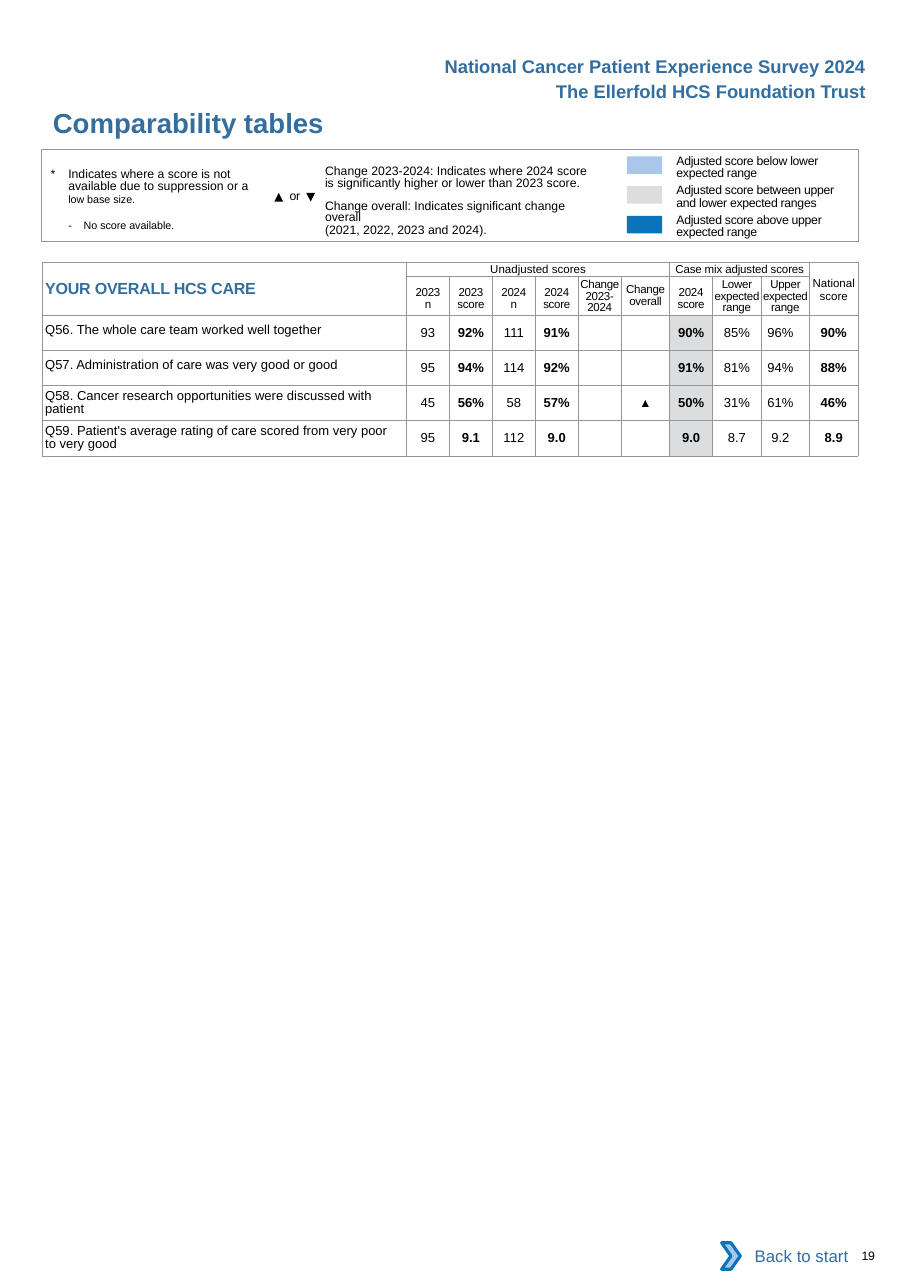
import pptx
import pptx.util
import pptx.dml.color
import pptx.oxml
import pptx.oxml.ns
import pptx.enum.shapes
import pptx.enum.text
from dataclasses import dataclass
from typing import Any, Optional

Inches = pptx.util.Inches
Pt = pptx.util.Pt
ALIGN = pptx.enum.text.PP_ALIGN
SHAPE = pptx.enum.shapes.MSO_SHAPE
MID = pptx.enum.text.MSO_ANCHOR.MIDDLE

BLUE, BLACK, GREY, WHITE = "336E9F", "000000", "939598", "FFFFFF"
BELOW, AMID, ABOVE = "A8C7E9", "DCDDDE", "0A74BB"


@dataclass
class Head:
    text: str
    line: float
    top: float


@dataclass
class Score:
    label: str
    top: float
    line: Optional[float]
    cells: list[str]


@dataclass
class Para:
    text: str
    line: float = 8.1
    before: float = 0
    size: float = 8
    left: float = 0
    hang: float = 0


HEADS = [
    Head("2023\nn", 8.3, 0.05), Head("2023\nscore", 8.3, 0.05),
    Head("2024\nn", 8.3, 0.05), Head("2024\nscore", 8.3, 0.05),
    Head("Change 2023-\n2024", 7.6, 0.02), Head("Change overall", 7.6, 0),
    Head("2024\nscore", 8.3, 0.05),
    Head("Lower expected range", 7.6, 0.02),
    Head("Upper expected range", 7.6, 0.02),
]
SCORES = [
    Score("Q56. The whole care team worked well together", 0.07, None,
          ["93", "92%", "111", "91%", "", "", "90%", "85%", "96%", "90%"]),
    Score("Q57. Administration of care was very good or good", 0.07, None,
          ["95", "94%", "114", "92%", "", "", "91%", "81%", "94%", "88%"]),
    Score("Q58. Cancer research opportunities were discussed with patient", 0.04, 8.6,
          ["45", "56%", "58", "57%", "", "▲", "50%", "31%", "61%", "46%"]),
    Score("Q59. Patient's average rating of care scored from very poor to very good",
          0.04, 8.6,
          ["95", "9.1", "112", "9.0", "", "", "9.0", "8.7", "9.2", "8.9"]),
]
BOLD = {2, 4, 7, 10}
TINT = 7
UPPER = 9


def tone(code: str) -> pptx.dml.color.RGBColor:
    return pptx.dml.color.RGBColor.from_string(code)


def write(frame: Any, text: str | list[Para], *, size: float = 8, color: str = BLACK,
          bold: bool = False, align: Any = ALIGN.LEFT, line: Optional[float] = None,
          track: float = 0) -> None:
    """Fill a text frame, one paragraph for each line or Para."""
    frame.word_wrap = True
    paras = text if isinstance(text, list) else [
        Para(part, line or 0, size=size) for part in text.split("\n")]
    for i, item in enumerate(paras):
        para = frame.paragraphs[0] if i == 0 else frame.add_paragraph()
        para.alignment = align
        if item.line:
            para.line_spacing = Pt(item.line)
        para.space_before = Pt(item.before)
        if item.left:
            props = para._p.get_or_add_pPr()
            props.set("marL", str(Inches(item.left)))
            props.set("indent", str(-Inches(item.hang)))
        run = para.add_run()
        run.text = item.text
        run.font.name = "Arial"
        run.font.size = Pt(item.size)
        run.font.bold = bold
        run.font.color.rgb = tone(color)
        if track:
            run._r.get_or_add_rPr().set("spc", str(round(track * 100)))


def inset(item: Any, left: float = 0, top: float = 0, right: float = 0) -> None:
    item.margin_left, item.margin_top = Inches(left), Inches(top)
    item.margin_right, item.margin_bottom = Inches(right), 0


def label(slide: Any, box: tuple, text: str | list[Para], *, top: float = 0,
          pad: bool = False, **form: Any) -> None:
    frame = slide.shapes.add_textbox(*map(Inches, box)).text_frame
    if not pad:
        inset(frame, top=top)
    write(frame, text, **form)


def draw(slide: Any, kind: Any, box: tuple, fill: Optional[str] = None,
         edge: Optional[str] = None, width: float = 0.75) -> Any:
    shape = slide.shapes.add_shape(kind, *map(Inches, box))
    shape.shadow.inherit = False
    if fill:
        shape.fill.solid()
        shape.fill.fore_color.rgb = tone(fill)
    else:
        shape.fill.background()
    if edge:
        shape.line.color.rgb = tone(edge)
        shape.line.width = Pt(width)
    else:
        shape.line.fill.background()
    return shape


def border(cell: Any) -> None:
    props = cell._tc.get_or_add_tcPr()
    for side in ("lnL", "lnR", "lnT", "lnB"):
        props.append(pptx.oxml.parse_xml(
            f'<a:{side} {pptx.oxml.ns.nsdecls("a")} w="6350"><a:solidFill>'
            f'<a:srgbClr val="{GREY}"/></a:solidFill></a:{side}>'))


def legend(slide: Any) -> None:
    draw(slide, SHAPE.RECTANGLE, (0.38, 1.36, 7.41, 0.83), edge=GREY)
    label(slide, (0.46, 1.5, 1.98, 0.55), [
        Para("*\tIndicates where a score is not available due to suppression or a",
             left=0.16, hang=0.16),
        Para("low base size.", size=7, left=0.16),
        Para("-\tNo score available.", before=8.5, size=7, left=0.3, hang=0.14),
    ], top=0.03)

    # Change arrows
    draw(slide, SHAPE.ISOSCELES_TRIANGLE, (2.49, 1.75, 0.08, 0.08), BLACK)
    label(slide, (2.53, 1.66, 0.34, 0.24), "or", pad=True, track=-0.2)
    down = draw(slide, SHAPE.ISOSCELES_TRIANGLE, (2.78, 1.75, 0.08, 0.08), BLACK)
    down.rotation = 180
    label(slide, (2.95, 1.5, 2.42, 0.55), [
        Para("Change 2023-2024: Indicates where 2024 score is significantly "
             "higher or lower than 2023 score."),
        Para("Change overall: Indicates significant change overall", 7.3, 7.3),
        Para("(2021, 2022, 2023 and 2024).", 8.8),
    ])

    # Colour key
    for i, fill in enumerate((BELOW, AMID, ABOVE)):
        draw(slide, SHAPE.RECTANGLE, (5.69, 1.42 + 0.27 * i, 0.32, 0.16), fill)
    label(slide, (6.14, 1.38, 1.47, 0.81), [
        Para("Adjusted score below lower expected range"),
        Para("Adjusted score between upper and lower expected ranges", before=3),
        Para("Adjusted score above upper expected range", before=3),
    ], top=0.03, track=-0.2)


def table(slide: Any) -> None:
    wide = [3.31] + [0.39] * 5 + [0.44, 0.39] + [0.44] * 3
    high = [0.13, 0.35] + [0.32] * len(SCORES)
    frame = slide.shapes.add_table(len(high), len(wide), Inches(0.38), Inches(2.38),
                                   Inches(sum(wide)), Inches(sum(high)))
    grid = frame.table
    grid.first_row = grid.horz_banding = False
    for col, size in zip(grid.columns, wide):
        col.width = Inches(size)
    for row, size in zip(grid.rows, high):
        row.height = Inches(size)
    for r in range(len(high)):
        for c in range(len(wide)):
            cell = grid.cell(r, c)
            inset(cell)
            border(cell)
            if r > 1 and c == TINT:
                cell.fill.solid()
                cell.fill.fore_color.rgb = tone(AMID)
            else:
                cell.fill.background()
            if c or r == 0:
                cell.vertical_anchor = MID

    def put(r: int, c: int, text: str, top: float = 0, right: float = 0,
            **form: Any) -> None:
        cell = grid.cell(r, c)
        inset(cell, 0 if c else 0.03, top, right)
        write(cell.text_frame, text, **{"align": ALIGN.CENTER, "size": 7.5, **form})

    # Heading rows
    for start, end in (((0, 0), (1, 0)), ((0, 1), (0, 6)),
                       ((0, 7), (0, 9)), ((0, 10), (1, 10))):
        grid.cell(*start).merge(grid.cell(*end))
    put(0, 0, "YOUR OVERALL HCS CARE", size=10.5, color=BLUE, bold=True,
        align=ALIGN.LEFT, track=-0.1)
    put(0, 1, "Unadjusted scores")
    put(0, 7, "Case mix adjusted scores", track=-0.1)
    put(0, 10, "National score", top=0.03)
    for c, head in enumerate(HEADS, 1):
        put(1, c, head.text, head.top, line=head.line, track=-0.2)

    # Score rows
    for r, score in enumerate(SCORES, 2):
        put(r, 0, score.label, score.top, 0.12, size=8.5, line=score.line,
            align=ALIGN.LEFT)
        for c, text in enumerate(score.cells, 1):
            put(r, c, text, right=0.09 if c == UPPER else 0,
                size=8 if text == "▲" else 8.5, bold=c in BOLD)


def main() -> None:
    deck = pptx.Presentation()
    deck.slide_width, deck.slide_height = Inches(8.26), Inches(11.69)
    slide = deck.slides.add_slide(deck.slide_layouts[5])

    # Page heading
    for top, text in ((0.45, "National Cancer Patient Experience Survey 2024"),
                      (0.68, "The Ellerfold HCS Foundation Trust")):
        label(slide, (3.5, top, 4.46, 0.3), text, pad=True, size=12, color=BLUE,
              bold=True, align=ALIGN.RIGHT)
    title = slide.shapes.title
    title.left, title.top, title.width, title.height = map(Inches, (0.48, 0.96, 4.13, 0.3))
    inset(title.text_frame)
    title.text_frame.vertical_anchor = pptx.enum.text.MSO_ANCHOR.TOP
    write(title.text_frame, "Comparability tables", size=18, color=BLUE, bold=True)

    legend(slide)
    table(slide)

    # Page foot
    back = draw(slide, SHAPE.RECTANGLE, (6.62, 11.19, 1.18, 0.42), WHITE)
    back.text_frame.vertical_anchor = MID
    write(back.text_frame, "Back to start", size=11, color=BLUE, align=ALIGN.RIGHT)
    draw(slide, SHAPE.CHEVRON, (6.55, 11.28, 0.17, 0.24), BELOW, ABOVE, 2)
    label(slide, (7.82, 11.33, 0.41, 0.13), "19", track=-0.2)
    deck.save("out.pptx")


if __name__ == "__main__":
    main()
